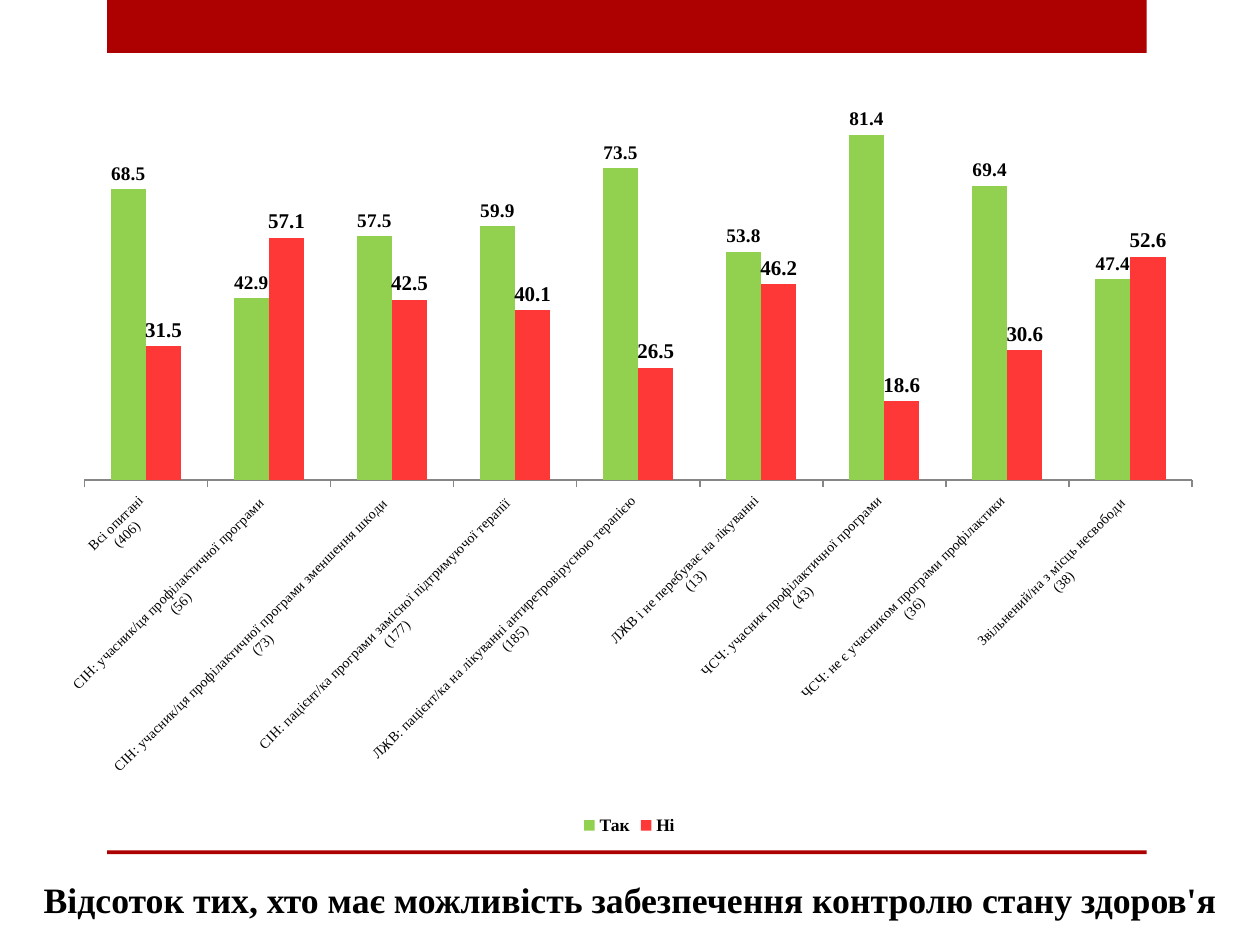
from lxml.etree import SubElement
from pptx import Presentation
from pptx.chart.data import CategoryChartData
from pptx.dml.color import RGBColor
from pptx.enum.chart import XL_CHART_TYPE, XL_LABEL_POSITION, XL_LEGEND_POSITION, XL_TICK_MARK
from pptx.enum.shapes import MSO_SHAPE
from pptx.enum.text import MSO_ANCHOR, PP_ALIGN
from pptx.oxml.ns import qn
from pptx.util import Inches, Pt

TITLE = "Відсоток тих, хто має можливість забезпечення контролю стану здоров'я"
GROUPS = [  # name, respondents, yes %, no %
    ("Всі опитані", 406, 68.5, 31.5),
    ("СІН: учасник/ця профілактичної програми ", 56, 42.9, 57.1),
    ("СІН: учасник/ця профілактичної програми зменшення шкоди ", 73, 57.5, 42.5),
    ("СІН: пацієнт/ка програми замісної підтримуючої терапії ", 177, 59.9, 40.1),
    ("ЛЖВ: пацієнт/ка на лікуванні антиретровірусною терапією", 185, 73.5, 26.5),
    ("ЛЖВ і не перебуває на лікуванні", 13, 53.8, 46.2),
    ("ЧСЧ: учасник профілактичної програми", 43, 81.4, 18.6),
    ("ЧСЧ: не є учасником програми профілактики", 36, 69.4, 30.6),
    ("Звільнений/на з місць несвободи ", 38, 47.4, 52.6),
]
ANSWERS = [("Так", "yes", "yes_label"), ("Ні", "no", "no_label")]
BANDS = [(0.85, 0, 8.25, 0.42), (0.85, 6.75, 8.25, 0.03)]
TITLE_BOX = (0, 6.89, 10, 0.47)
CHART_BOX = (0.35, 0.67, 9.29, 6)
PLOT_BOX = (0.67, 0.78, 8.79, 3.03)
VALUE_FORMAT = "###0.0"

THEME = {
    "font": "Times New Roman",
    "colors": {"text": "000000", "band": "AD0101", "axis": "868686",
               "yes": "92D050", "no": "FE3737"},
    "sizes": {"title": 20.4, "chart": 8, "legend": 10, "yes_label": 11, "no_label": 12},
    "axis_width": 1,
}


def color(role):
    return RGBColor.from_string(THEME["colors"][role])


def box(lengths):
    return [Inches(length) for length in lengths]


def set_all(target, values):
    for name, value in values.items():
        setattr(target, name, value)


def style_font(font, size_role, bold=True):
    set_all(font, {"name": THEME["font"], "size": Pt(THEME["sizes"][size_role]), "bold": bold})
    font.color.rgb = color("text")


def add_bands(slide):
    for band_box in BANDS:
        band = slide.shapes.add_shape(MSO_SHAPE.RECTANGLE, *box(band_box))
        band.shadow.inherit = False
        band.fill.solid()
        band.fill.fore_color.rgb = color("band")
        band.line.fill.background()


def place_title(slide):
    title = slide.shapes.title
    set_all(title, dict(zip(("left", "top", "width", "height"), box(TITLE_BOX))))
    frame = title.text_frame
    set_all(frame, {"text": TITLE, "word_wrap": True, "vertical_anchor": MSO_ANCHOR.BOTTOM})
    heading = frame.paragraphs[0]
    heading.alignment = PP_ALIGN.CENTER
    style_font(heading.runs[0].font, "title")


def fix_plot_area(chart):
    """Pin the inner plot area to PLOT_BOX, given as shares of CHART_BOX."""
    plot_area = chart.plots[0]._element.getparent()
    layout = plot_area.find(qn("c:layout"))
    if layout is None:
        layout = SubElement(plot_area, qn("c:layout"))
        plot_area.insert(0, layout)
    manual = SubElement(layout, qn("c:manualLayout"))
    chart_left, chart_top, chart_width, chart_height = CHART_BOX
    left, top, width, height = PLOT_BOX
    settings = {
        "layoutTarget": "inner", "xMode": "edge", "yMode": "edge",
        "x": (left - chart_left) / chart_width, "y": (top - chart_top) / chart_height,
        "w": width / chart_width, "h": height / chart_height,
    }
    for tag, value in settings.items():
        SubElement(manual, qn(f"c:{tag}")).set("val", str(value))


def add_answers_chart(slide):
    answers = CategoryChartData(number_format=VALUE_FORMAT)
    answers.categories = [f"{name}\n({count})" for name, count, *_ in GROUPS]
    for column, (answer, *_) in enumerate(ANSWERS, start=2):
        answers.add_series(answer, [group[column] for group in GROUPS])
    chart = slide.shapes.add_chart(
        XL_CHART_TYPE.COLUMN_CLUSTERED, *box(CHART_BOX), answers).chart
    chart.has_title = False
    style_font(chart.font, "chart", bold=False)

    chart.has_legend = True
    set_all(chart.legend, {"position": XL_LEGEND_POSITION.BOTTOM, "include_in_layout": False})
    style_font(chart.legend.font, "legend")

    set_all(chart.value_axis, {"visible": False, "has_major_gridlines": False,
                               "minimum_scale": 0, "maximum_scale": 90})
    groups_axis = chart.category_axis
    groups_axis.major_tick_mark = XL_TICK_MARK.OUTSIDE
    groups_axis.format.line.color.rgb = color("axis")
    groups_axis.format.line.width = Pt(THEME["axis_width"])
    style_font(groups_axis.tick_labels.font, "chart", bold=False)
    groups_axis._element.find(qn("c:txPr")).find(qn("a:bodyPr")).set("rot", "-2700000")

    plot = chart.plots[0]
    set_all(plot, {"gap_width": 150, "overlap": 0, "vary_by_categories": False})
    for series, (_, color_role, size_role) in zip(plot.series, ANSWERS):
        series.invert_if_negative = False
        series.format.fill.solid()
        series.format.fill.fore_color.rgb = color(color_role)
        set_all(series.data_labels, {
            "show_value": True, "number_format": VALUE_FORMAT,
            "number_format_is_linked": False, "position": XL_LABEL_POSITION.OUTSIDE_END})
        style_font(series.data_labels.font, size_role)
    fix_plot_area(chart)


def main():
    deck = Presentation()
    set_all(deck, {"slide_width": Inches(10), "slide_height": Inches(7.5)})
    slide = deck.slides.add_slide(deck.slide_layouts[5])
    add_bands(slide)
    place_title(slide)
    add_answers_chart(slide)
    deck.save("out.pptx")


if __name__ == "__main__":
    main()
